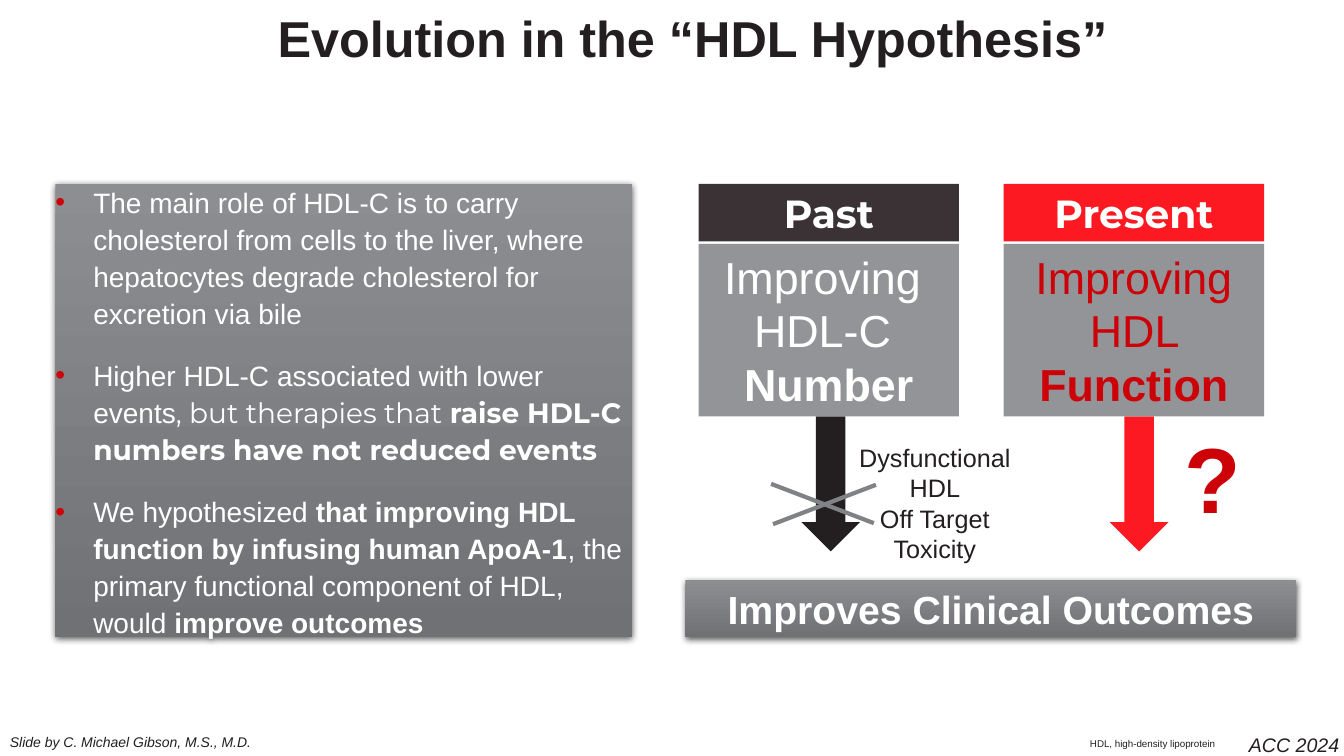
"""Build the slide on the evolution of the HDL hypothesis."""
from lxml.etree import SubElement
from pptx import Presentation
from pptx.dml.color import RGBColor
from pptx.enum.shapes import MSO_CONNECTOR as Connector, MSO_SHAPE as Preset
from pptx.enum.text import MSO_ANCHOR as Anchor, MSO_AUTO_SIZE as AutoSize, PP_ALIGN as Align
from pptx.oxml.ns import qn
from pptx.util import Pt

COLORS = {
    "ink": "231F20", "white": "FFFFFF", "red": "CD0209", "bright": "FC1921",
    "dark": "3A3234", "panel": "929497", "cross": "808285",
    "light": "8D8E92", "deep": "6F7175", "shadow": "000000",
}
BOLD = {"bold": True}
MONTSERRAT = {"name": "Montserrat"}

TITLE = "Evolution in the “HDL Hypothesis”"
BULLETS = [
    [("The main role of HDL-C is to carry cholesterol from cells to the liver, where "
      "hepatocytes degrade cholesterol for excretion via bile", {})],
    [("Higher HDL-C associated with lower events", {}),
     (", but therapies that ", MONTSERRAT),
     ("raise HDL-C numbers have not reduced events", MONTSERRAT | BOLD)],
    [("We hypothesized ", {}),
     ("that improving HDL function by infusing human ApoA-1", BOLD),
     (", the primary functional component of HDL, would ", {}),
     ("improve outcomes", BOLD)],
]
COLUMNS = [
    {"left": 499, "header": "Past", "header_fill": "dark", "color": "white",
     "lines": ["Improving ", "HDL-C ", "Number"], "arrow_left": 572.4, "arrow_fill": "ink"},
    {"left": 717, "header": "Present", "header_fill": "bright", "color": "red",
     "lines": ["Improving", " HDL ", "Function"], "arrow_left": 792.7, "arrow_fill": "bright"},
]
CROSS = [(552.2, 374.4, 625.7, 346.3), (550.8, 345.6, 624.2, 373.7)]
OUTCOME = "Improves Clinical Outcomes"
LABELS = [
    (["Slide by C. Michael Gibson, M.S., M.D."], (0, 520.6, 188.6, 19.4),
     {"size": 10, "italic": True}, "ink", {}),
    (["ACC 2024"], (884.9, 519.8, 79.9, 24.5), {"size": 14, "italic": True}, "ink", {}),
    (["HDL, high-density lipoprotein"], (748, 500.4, 150.5, 34.6), {"size": 7}, "ink",
     {"align": Align.CENTER, "inset": (0, 0), "anchor": Anchor.BOTTOM, "wrap": True}),
    (["?"], (838.8, 297.4, 55.4, 87.1), {"size": 66, "bold": True}, "red", {}),
    (["Dysfunctional HDL", "Off Target Toxicity"], (606.2, 312.5, 123.1, 94.3),
     {"size": 18}, "ink", {"align": Align.CENTER, "wrap": True}),
]

PANEL_TOP, PANEL_BOTTOM = 131.4, 455.2
COLUMN_WIDTH, HEADER_HEIGHT, HEADER_GAP = 186, 41, 1.8
ARROW_TOP, ARROW_WIDTH, ARROW_HEIGHT = 297.4, 42, 96.5
INDENT = 27


def rgb(name):
    return RGBColor.from_string(COLORS[name])


def write(shape, paragraphs, font, color, align=Align.LEFT, inset=(7.2, 3.6),
          anchor=Anchor.TOP, wrap=False):
    frame = shape.text_frame
    across, down = inset
    settings = {"auto_size": AutoSize.NONE, "word_wrap": wrap, "vertical_anchor": anchor,
                "margin_left": Pt(across), "margin_right": Pt(across),
                "margin_top": Pt(down), "margin_bottom": Pt(down)}
    for key, value in settings.items():
        setattr(frame, key, value)
    for index, runs in enumerate(paragraphs):
        paragraph = frame.add_paragraph() if index else frame.paragraphs[0]
        paragraph.alignment = align
        for text, changes in [(runs, {})] if isinstance(runs, str) else runs:
            run = paragraph.add_run()
            run.text = text
            values = {"name": "Arial", "bold": False, "italic": False} | font | changes
            values["size"] = Pt(values["size"])
            for key, value in values.items():
                setattr(run.font, key, value)
            run.font.color.rgb = rgb(color)
    return frame


def add_block(slide, preset, box, fill):
    shape = slide.shapes.add_shape(preset, *map(Pt, box))
    shape.shadow.inherit = False
    shape.line.fill.background()
    if fill == "gradient":
        shape.fill.gradient()
        shape.fill.gradient_angle = 270
        for stop, name in zip(shape.fill.gradient_stops, ("light", "deep")):
            stop.color.rgb = rgb(name)
        effects = shape.element.spPr.find(qn("a:effectLst"))
        shadow = SubElement(effects, qn("a:outerShdw"), blurRad=str(Pt(4.5)),
                            dist=str(Pt(1.5)), dir="5400000", rotWithShape="0")
        tint = SubElement(shadow, qn("a:srgbClr"), val=COLORS["shadow"])
        SubElement(tint, qn("a:alpha"), val="63000")
    else:
        shape.fill.solid()
        shape.fill.fore_color.rgb = rgb(fill)
    return shape


def add_bullet(paragraph):
    properties = paragraph._p.get_or_add_pPr()
    properties.set("marL", str(Pt(INDENT)))
    properties.set("indent", str(-Pt(INDENT)))
    color = SubElement(properties, qn("a:buClr"))
    SubElement(color, qn("a:srgbClr"), val=COLORS["red"])
    SubElement(properties, qn("a:buFont"), typeface="Arial")
    SubElement(properties, qn("a:buChar"), char="•")


def add_title(slide):
    title = slide.shapes.title
    box = {"left": 159.8, "top": 9.4, "width": 670.3, "height": 39.6}
    for key, value in box.items():
        setattr(title, key, Pt(value))
    frame = write(title, [TITLE], {"size": 36, "bold": True}, "ink", Align.CENTER,
                  (0, 0), Anchor.MIDDLE, True)
    frame.paragraphs[0].line_spacing = 0.9


def add_bullets(slide):
    box = (39.6, PANEL_TOP, 411.8, PANEL_BOTTOM - PANEL_TOP)
    panel = add_block(slide, Preset.RECTANGLE, box, "gradient")
    frame = write(panel, BULLETS, {"size": 20}, "white", inset=(0, 0),
                  anchor=Anchor.MIDDLE, wrap=True)
    for index, paragraph in enumerate(frame.paragraphs):
        paragraph.line_spacing = 1.1
        if index:
            paragraph.space_before = Pt(18)
        add_bullet(paragraph)


def add_column(slide, column):
    centred = {"align": Align.CENTER, "anchor": Anchor.MIDDLE, "wrap": True}
    body_top = PANEL_TOP + HEADER_HEIGHT + HEADER_GAP
    add_block(slide, Preset.DOWN_ARROW,
              (column["arrow_left"], ARROW_TOP, ARROW_WIDTH, ARROW_HEIGHT),
              column["arrow_fill"])
    body = add_block(slide, Preset.RECTANGLE,
                     (column["left"], body_top, COLUMN_WIDTH, ARROW_TOP - body_top), "panel")
    *plain, last = column["lines"]
    write(body, plain + [[(last, BOLD)]], {"size": 32}, column["color"], **centred)
    header = add_block(slide, Preset.RECTANGLE,
                       (column["left"], PANEL_TOP, COLUMN_WIDTH, HEADER_HEIGHT),
                       column["header_fill"])
    write(header, [column["header"]], MONTSERRAT | BOLD | {"size": 28}, "white", **centred)


def add_cross(slide):
    for ends in CROSS:
        line = slide.shapes.add_connector(Connector.STRAIGHT, *map(Pt, ends))
        line.line.color.rgb = rgb("cross")
        line.line.width = Pt(3)
        SubElement(line.element.spPr, qn("a:effectLst"))


def main():
    presentation = Presentation()
    presentation.slide_width, presentation.slide_height = Pt(960), Pt(540)
    slide = presentation.slides.add_slide(presentation.slide_layouts[5])
    add_title(slide)
    add_bullets(slide)
    for column in COLUMNS:
        add_column(slide, column)
    add_cross(slide)
    outcome = add_block(slide, Preset.RECTANGLE,
                        (489.6, PANEL_BOTTOM - HEADER_HEIGHT, 436.3, HEADER_HEIGHT), "gradient")
    write(outcome, [OUTCOME], {"size": 28, "bold": True}, "white", Align.CENTER,
          anchor=Anchor.MIDDLE, wrap=True)
    for paragraphs, box, font, color, layout in LABELS:
        label = slide.shapes.add_textbox(*map(Pt, box))
        write(label, paragraphs, font, color, **layout)
    presentation.save("out.pptx")


if __name__ == "__main__":
    main()
